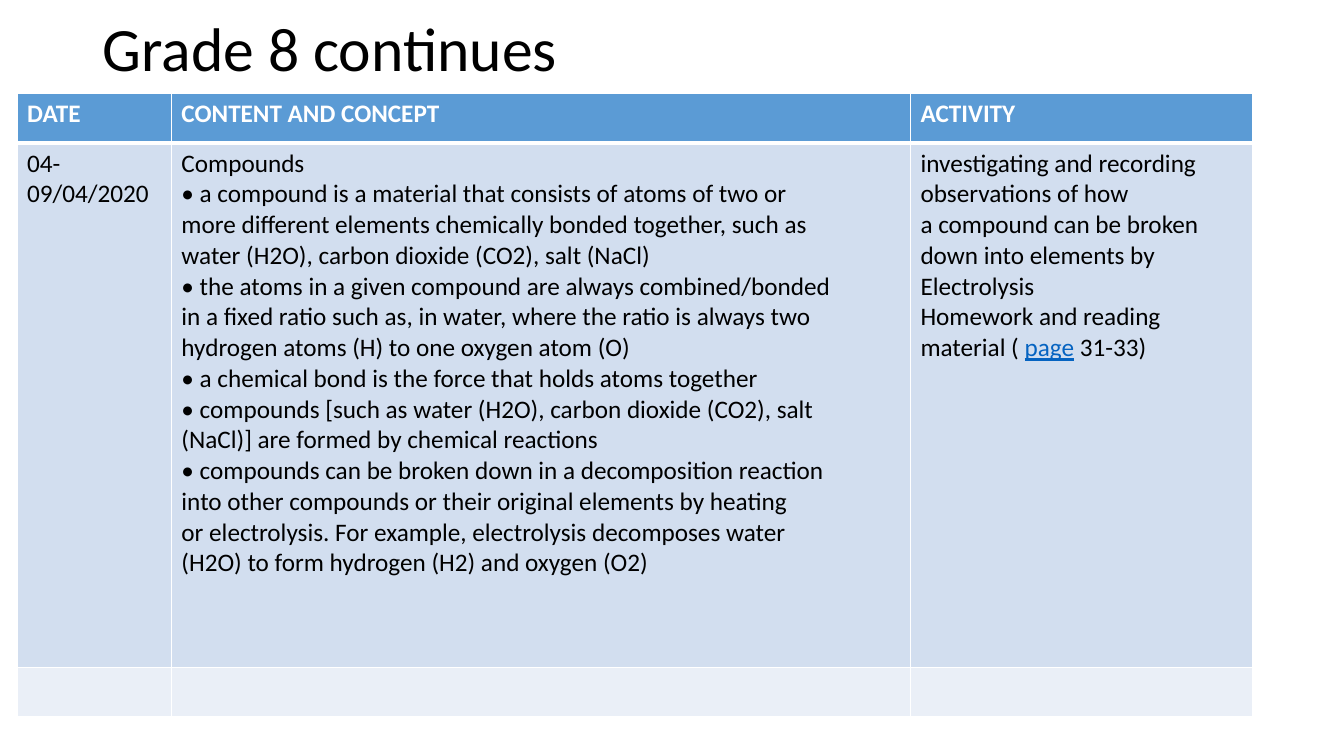
from lxml import etree
from pptx import Presentation
from pptx.dml.color import RGBColor
from pptx.enum.text import MSO_ANCHOR
from pptx.oxml.ns import qn
from pptx.util import Inches, Pt

BLACK = RGBColor(0x00, 0x00, 0x00)
WHITE = RGBColor(0xFF, 0xFF, 0xFF)
HEADER_BLUE = RGBColor(0x5B, 0x9B, 0xD5)
BAND_DARK = RGBColor(0xD2, 0xDE, 0xEF)
BAND_LIGHT = RGBColor(0xEA, 0xEF, 0xF7)
LINK_BLUE = RGBColor(0x05, 0x63, 0xC1)

TITLE = "Grade 8 continues"
HEADERS = ["DATE", "CONTENT AND CONCEPT", "ACTIVITY"]
DATE = ["04-09/04/2020"]
CONCEPTS = [
    "Compounds",
    "• a compound is a material that consists of atoms of two or",
    "more different elements chemically bonded together, such as",
    "water (H2O), carbon dioxide (CO2), salt (NaCl)",
    "• the atoms in a given compound are always combined/bonded",
    "in a fixed ratio such as, in water, where the ratio is always two",
    "hydrogen atoms (H) to one oxygen atom (O)",
    "• a chemical bond is the force that holds atoms together",
    "• compounds [such as water (H2O), carbon dioxide (CO2), salt",
    "(NaCl)] are formed by chemical reactions",
    "• compounds can be broken down in a decomposition reaction",
    "into other compounds or their original elements by heating",
    "or electrolysis. For example, electrolysis decomposes water",
    "(H2O) to form hydrogen (H2) and oxygen (O2)",
]
LINK_WORD = "page"
ACTIVITIES = [
    "investigating and recording observations of how",
    "a compound can be broken down into elements by",
    "Electrolysis",
    ("Homework and reading material ( ", LINK_WORD, " 31-33)"),
]
ROWS = [[[h] for h in HEADERS], [DATE, CONCEPTS, ACTIVITIES], [[], [], []]]
COL_WIDTHS = [1.53, 7.33, 3.39]
ROW_HEIGHTS = [0.49, 5.2, 0.49]
ROW_FILLS = [HEADER_BLUE, BAND_DARK, BAND_LIGHT]

BODY = {"name": "Calibri", "size": Pt(18), "bold": False}
HEAD = {**BODY, "bold": True}
HEADING = {**BODY, "size": Pt(44)}
LINK = {**BODY, "underline": True}


def add_run(p, text, font, color):
    r = p.add_run()
    r.text = text
    for key, value in font.items():
        setattr(r.font, key, value)
    r.font.color.rgb = color


def set_borders(cell, widths):
    tcPr = cell._tc.get_or_add_tcPr()
    for side, width in widths.items():
        ln = etree.SubElement(tcPr, qn(f"a:ln{side}"), w=str(Pt(width)))
        fill = etree.SubElement(ln, qn("a:solidFill"))
        etree.SubElement(fill, qn("a:srgbClr"), val=str(WHITE))


def fill_cell(cell, lines, font, color):
    tf = cell.text_frame
    for i, line in enumerate(lines):
        p = tf.paragraphs[0] if i == 0 else tf.add_paragraph()
        for text in (line,) if isinstance(line, str) else line:
            if text == LINK_WORD:
                add_run(p, text, LINK, LINK_BLUE)
            else:
                add_run(p, text, font, color)


def main():
    prs = Presentation()
    prs.slide_width, prs.slide_height = Inches(13.33), Inches(7.5)
    s = prs.slides.add_slide(prs.slide_layouts[6])

    title = s.shapes.add_textbox(Inches(0.92), Inches(0.1), Inches(11.5), Inches(0.83))
    tf = title.text_frame
    tf.word_wrap = True
    tf.vertical_anchor = MSO_ANCHOR.MIDDLE
    tf.paragraphs[0].line_spacing = 0.9
    add_run(tf.paragraphs[0], TITLE, HEADING, BLACK)

    table = s.shapes.add_table(
        len(ROWS), len(COL_WIDTHS), Inches(0.17), Inches(0.93),
        Inches(sum(COL_WIDTHS)), Inches(sum(ROW_HEIGHTS))).table
    for col, width in zip(table.columns, COL_WIDTHS):
        col.width = Inches(width)
    for i, (row, height) in enumerate(zip(table.rows, ROW_HEIGHTS)):
        row.height = Inches(height)
        font, color = (HEAD, WHITE) if i == 0 else (BODY, BLACK)
        borders = {"L": 1, "R": 1, "T": 3 if i == 1 else 1, "B": 3 if i == 0 else 1}
        for cell, lines in zip(row.cells, ROWS[i]):
            set_borders(cell, borders)
            cell.fill.solid()
            cell.fill.fore_color.rgb = ROW_FILLS[i]
            fill_cell(cell, lines, font, color)

    prs.save("out.pptx")


if __name__ == "__main__":
    main()
